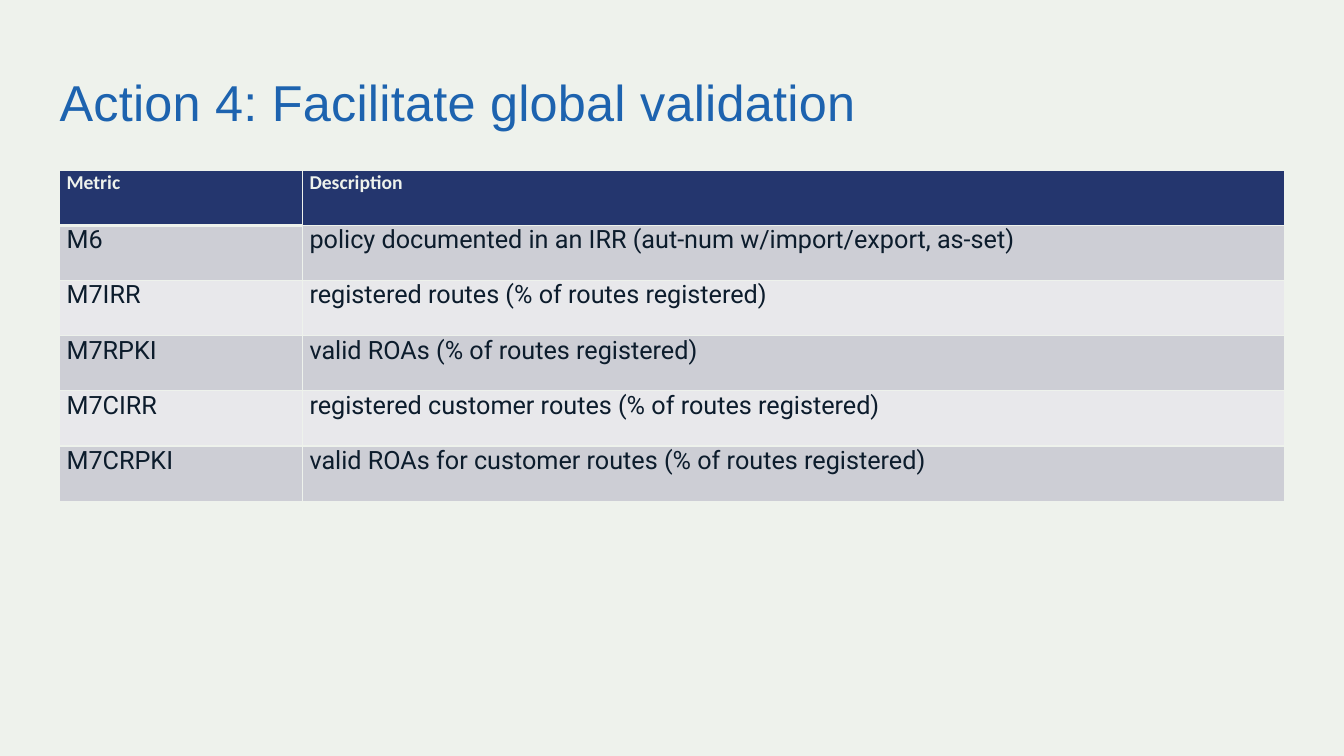
from lxml.etree import SubElement
from pptx import Presentation
from pptx.dml.color import RGBColor
from pptx.enum.text import MSO_ANCHOR
from pptx.oxml.ns import qn
from pptx.util import Inches, Pt

PALE = RGBColor(0xEE, 0xF2, 0xEC)
BLUE = RGBColor(0x1D, 0x63, 0xAF)
NAVY = RGBColor(0x24, 0x36, 0x6E)
INK = RGBColor(0x0C, 0x1C, 0x2C)
GREY = RGBColor(0xCD, 0xCE, 0xD5)
LIGHT_GREY = RGBColor(0xE8, 0xE8, 0xEB)

LEFT, WIDTH = Inches(0.59), Inches(12.15)
COLUMN_WIDTHS = (2.41, 9.74)
ROW_HEIGHT = 0.547
METRICS = [
    ("Metric", "Description"),
    ("M6", "policy documented in an IRR (aut-num w/import/export, as-set)"),
    ("M7IRR", "registered routes (% of routes registered)"),
    ("M7RPKI", "valid ROAs (% of routes registered)"),
    ("M7CIRR", "registered customer routes (% of routes registered)"),
    ("M7CRPKI", "valid ROAs for customer routes (% of routes registered)"),
]


def style_text(paragraph, font_name, size, color, bold=False):
    for run in paragraph.runs:
        run.font.name = font_name
        run.font.size = Pt(size)
        run.font.color.rgb = color
        run.font.bold = bold


def add_title(slide, wording):
    title = slide.shapes.add_textbox(LEFT, Inches(0.62), WIDTH, Inches(0.86))
    frame = title.text_frame
    frame.word_wrap = True
    frame.vertical_anchor = MSO_ANCHOR.TOP
    frame.margin_left = frame.margin_right = frame.margin_bottom = 0
    frame.margin_top = Inches(0.05)
    heading = frame.paragraphs[0]
    heading.text = wording
    heading.line_spacing = 1.06
    style_text(heading, "Arial", 36, BLUE)
    heading.runs[0].font._element.set("spc", "20")


def set_borders(cell, bottom_width):
    properties = cell._tc.get_or_add_tcPr()
    widths = {"a:lnL": 1, "a:lnR": 1, "a:lnT": 1, "a:lnB": bottom_width}
    for side, width in widths.items():
        border = SubElement(properties, qn(side), w=str(Pt(width)))
        fill = SubElement(border, qn("a:solidFill"))
        SubElement(fill, qn("a:srgbClr"), val=str(PALE))


def fill_cell(cell, wording, row, column):
    cell.margin_left = cell.margin_right = Inches(0.07)
    cell.margin_top = cell.margin_bottom = 0
    cell.vertical_anchor = MSO_ANCHOR.TOP
    set_borders(cell, 3 if row == column == 0 else 1)
    cell.fill.solid()
    entry = cell.text_frame.paragraphs[0]
    entry.text = wording
    if row == 0:
        cell.fill.fore_color.rgb = NAVY
        style_text(entry, "Calibri", 14, PALE, bold=True)
    else:
        cell.fill.fore_color.rgb = GREY if row % 2 else LIGHT_GREY
        style_text(entry, "Roboto", 18, INK)


def add_metrics_table(slide):
    height = Inches(ROW_HEIGHT * len(METRICS))
    table = slide.shapes.add_table(
        len(METRICS), len(COLUMN_WIDTHS), LEFT, Inches(1.69), WIDTH, height
    ).table
    for column, width in zip(table.columns, COLUMN_WIDTHS):
        column.width = Inches(width)
    for row, wordings in enumerate(METRICS):
        table.rows[row].height = Inches(ROW_HEIGHT)
        for column, wording in enumerate(wordings):
            fill_cell(table.cell(row, column), wording, row, column)


def main():
    deck = Presentation()
    deck.slide_width, deck.slide_height = Inches(13.33), Inches(7.5)
    slide = deck.slides.add_slide(deck.slide_layouts[6])
    slide.background.fill.solid()
    slide.background.fill.fore_color.rgb = PALE
    add_title(slide, "Action 4: Facilitate global validation")
    add_metrics_table(slide)
    deck.save("out.pptx")


if __name__ == "__main__":
    main()
